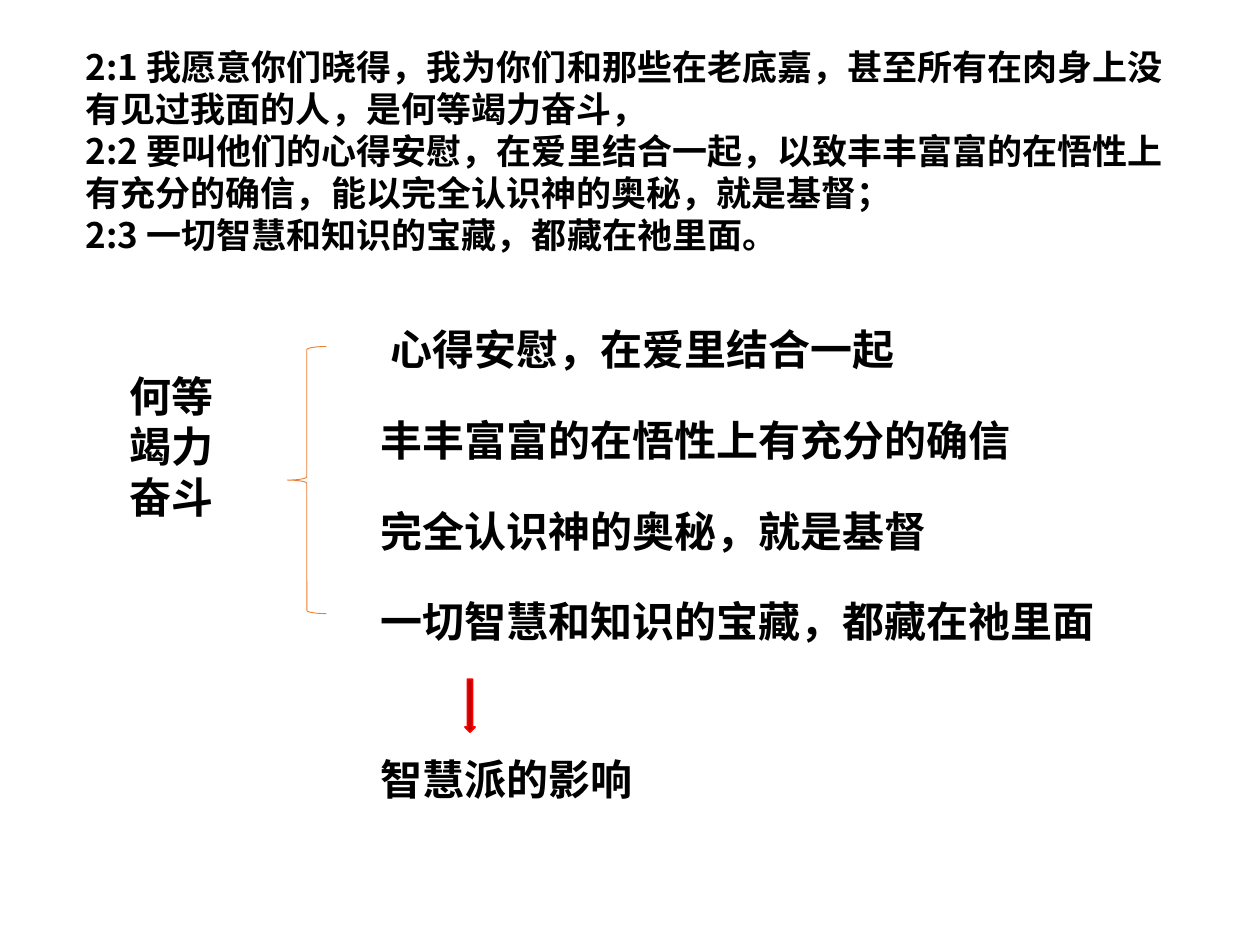
from dataclasses import dataclass

from lxml.etree import SubElement
from pptx import Presentation
from pptx.dml.color import RGBColor
from pptx.enum.lang import MSO_LANGUAGE_ID
from pptx.enum.shapes import MSO_SHAPE
from pptx.enum.text import MSO_ANCHOR, MSO_AUTO_SIZE, PP_ALIGN
from pptx.oxml.ns import qn
from pptx.util import Inches, Pt


@dataclass(frozen=True)
class Theme:
    """Colours, fonts and type sizes of the slide."""

    text: str = "000000"
    brace: str = "ED7D31"
    arrow: str = "C00000"
    arrow_edge: str = "FF0000"
    verse_font: str = "Noto Sans CJK SC"
    outline_font: str = "Calibri"
    east_asian_font: str = "Noto Sans CJK SC"
    verse_size: int = 20
    outline_size: int = 24


THEME = Theme()
ROW = 0.72
LINE_HEIGHT = 0.5
VERSES = (
    "2:1 我愿意你们晓得，我为你们和那些在老底嘉，甚至所有在肉身上没有见过我面的人，是何等竭力奋斗，",
    "2:2 要叫他们的心得安慰，在爱里结合一起，以致丰丰富富的在悟性上有充分的确信，能以完全认识神的奥秘，就是基督；",
    "2:3 一切智慧和知识的宝藏，都藏在祂里面。",
)
POINTS = (
    ("心得安慰，在爱里结合一起", 4.22),
    ("丰丰富富的在悟性上有充分的确信", 5.22),
    ("完全认识神的奥秘，就是基督", 4.55),
    ("一切智慧和知识的宝藏，都藏在祂里面", 5.89),
)


def place(shape, left, top, width, height):
    """Put a shape at a box given in inches."""
    shape.left, shape.top = Inches(left), Inches(top)
    shape.width, shape.height = Inches(width), Inches(height)


def write(shape, *lines, font=THEME.outline_font, size=THEME.outline_size, wrap=True):
    """Fill a shape with bold left-aligned paragraphs."""
    frame = shape.text_frame
    frame.word_wrap = wrap
    frame.auto_size = MSO_AUTO_SIZE.SHAPE_TO_FIT_TEXT
    frame.vertical_anchor = MSO_ANCHOR.TOP
    for index, line in enumerate(lines):
        paragraph = frame.add_paragraph() if index else frame.paragraphs[0]
        paragraph.alignment = PP_ALIGN.LEFT
        run = paragraph.add_run()
        run.text = line
        run.font.name, run.font.size, run.font.bold = font, Pt(size), True
        run.font.language_id = MSO_LANGUAGE_ID.SIMPLIFIED_CHINESE
        run.font.color.rgb = RGBColor.from_string(THEME.text)
        properties = run.font._element
        SubElement(properties, qn("a:ea")).set("typeface", THEME.east_asian_font)


def add_text(slide, text, box, **text_format):
    """Add a text box with one paragraph."""
    shape = slide.shapes.add_textbox(*map(Inches, box))
    write(shape, text, **text_format)


def add_mark(slide, kind, box, line, weight, fill=None):
    """Add a preset shape with a coloured outline and optional fill."""
    shape = slide.shapes.add_shape(kind, *map(Inches, box))
    shape.shadow.inherit = False
    shape.line.color.rgb = RGBColor.from_string(line)
    shape.line.width = Pt(weight)
    if fill:
        shape.fill.solid()
        shape.fill.fore_color.rgb = RGBColor.from_string(fill)
    else:
        shape.fill.background()


def add_verses(slide, left, top, width, height):
    """Set the Bible passage in the title placeholder."""
    title = slide.shapes.title
    place(title, left, top, width, height)
    write(title, *VERSES, font=THEME.verse_font, size=THEME.verse_size)


def add_outline(slide, left, top, height):
    """Add the label, its brace and the four points at equal steps."""
    add_text(slide, "何等竭力奋斗", (left, top + 0.36, 0.94, 1.31))
    add_mark(slide, MSO_SHAPE.LEFT_BRACE, (left + 1.35, top + 0.22, 0.31, height),
             THEME.brace, 0.5)
    for row, (point, width) in enumerate(POINTS):
        indent = 1.99 if row else 2.07
        box = (left + indent, top + row * ROW - 0.01, width, LINE_HEIGHT)
        add_text(slide, point, box, wrap=False)


def add_conclusion(slide, left, top):
    """Add the arrow and the conclusion below it."""
    add_mark(slide, MSO_SHAPE.DOWN_ARROW, (left + 0.77, top, 0.08, 0.42),
             THEME.arrow_edge, 1, fill=THEME.arrow)
    add_text(slide, "智慧派的影响", (left, top + 0.54, 2.21, LINE_HEIGHT), wrap=False)


def main():
    """Build and save the slide."""
    presentation = Presentation()
    presentation.slide_width, presentation.slide_height = Inches(10), Inches(7.5)
    slide = presentation.slides.add_slide(presentation.slide_layouts[5])
    add_verses(slide, 0.58, 0.31, 8.83, 1.78)
    add_outline(slide, 0.93, 2.53, 2.12)
    add_conclusion(slide, 2.92, 5.39)
    presentation.save("out.pptx")


if __name__ == "__main__":
    main()
